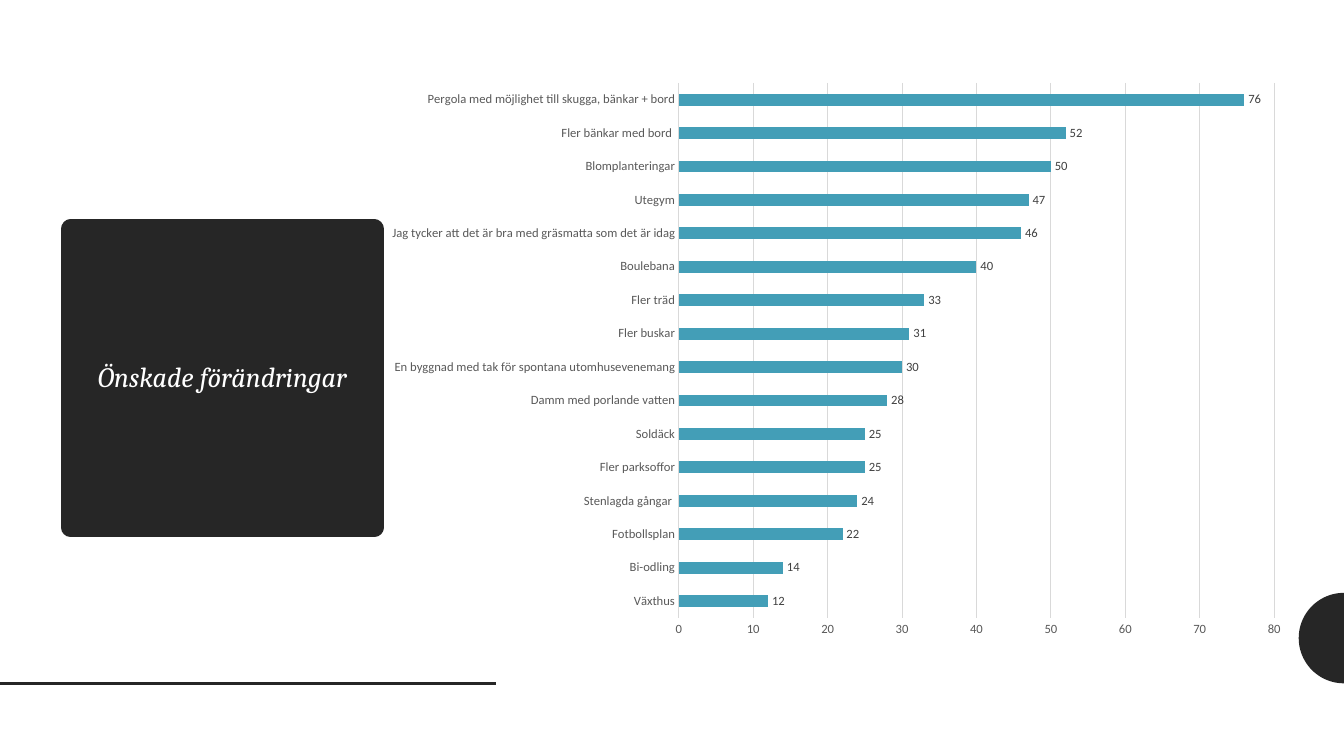
from math import cos, pi, sin

from lxml.etree import SubElement
from pptx import Presentation
from pptx.chart.data import CategoryChartData
from pptx.dml.color import RGBColor
from pptx.enum.chart import XL_CHART_TYPE as ChartType
from pptx.enum.chart import XL_LABEL_POSITION as LabelPosition
from pptx.enum.chart import XL_TICK_MARK as TickMark
from pptx.enum.shapes import MSO_CONNECTOR as Connector
from pptx.enum.text import MSO_ANCHOR as Anchor
from pptx.enum.text import MSO_AUTO_SIZE as AutoSize
from pptx.enum.text import PP_ALIGN as Align
from pptx.oxml.ns import qn
from pptx.util import Cm, Pt

# Content
TITLE = "Önskade förändringar"
WISHES = [
    ("Växthus", 12),
    ("Bi-odling", 14),
    ("Fotbollsplan", 22),
    ("Stenlagda gångar ", 24),
    ("Fler parksoffor", 25),
    ("Soldäck", 25),
    ("Damm med porlande vatten", 28),
    ("En byggnad med tak för spontana utomhusevenemang", 30),
    ("Fler buskar", 31),
    ("Fler träd", 33),
    ("Boulebana", 40),
    ("Jag tycker att det är bra med gräsmatta som det är idag", 46),
    ("Utegym", 47),
    ("Blomplanteringar", 50),
    ("Fler bänkar med bord ", 52),
    ("Pergola med möjlighet till skugga, bänkar + bord", 76),
]

# Layout in centimetres, and colours
WIDTH, HEIGHT = 33.87, 19.05
TITLE_BOX = (1.78, 5.77, 7.65, 7.52)
CHART_BOX = (9.42, 1.8, 23.32, 14.53)
RULE_Y, RULE_END = 17.22, 12.5
RADIUS = 1.14
DARK, WHITE, TEAL = "262626", "FFFFFF", "439EB7"
AXIS_TEXT, LABEL_TEXT, GRID = "595959", "404040", "D9D9D9"


def paint(target, color):
    target.solid()
    target.fore_color.rgb = RGBColor.from_string(color)


def style_font(font, name, size, color):
    font.name, font.size = name, Pt(size)
    font.color.rgb = RGBColor.from_string(color)


def style_line(line, color, width):
    paint(line.fill, color)
    line.width = Pt(width)


presentation = Presentation()
presentation.slide_width, presentation.slide_height = Cm(WIDTH), Cm(HEIGHT)
slide = presentation.slides.add_slide(presentation.slide_layouts[5])
shapes = slide.shapes

# Half circle on the right edge
center_y = RULE_Y - RADIUS
arc = [(Cm(WIDTH - RADIUS * sin(pi * step / 48)),
        Cm(center_y - RADIUS * cos(pi * step / 48))) for step in range(49)]
builder = shapes.build_freeform(*arc[0])
builder.add_line_segments(arc[1:], close=True)
half_circle = builder.convert_to_shape()
half_circle.shadow.inherit = False
paint(half_circle.fill, DARK)
half_circle.line.fill.background()

# Rule at the lower left
rule = shapes.add_connector(Connector.STRAIGHT, 0, Cm(RULE_Y), Cm(RULE_END), Cm(RULE_Y))
style_line(rule.line, DARK, 2)
SubElement(rule._element.spPr, qn("a:effectLst"))

# Title in a dark box; the thick line with round joins softens its corners
title = shapes.title
title.left, title.top, title.width, title.height = map(Cm, TITLE_BOX)
paint(title.fill, DARK)
style_line(title.line, DARK, 13.75)
SubElement(title._element.spPr.find(qn("a:ln")), qn("a:round"))
text_frame = title.text_frame
text_frame.text = TITLE
text_frame.word_wrap = True
text_frame.auto_size = AutoSize.NONE
text_frame.vertical_anchor = Anchor.MIDDLE
paragraph = text_frame.paragraphs[0]
paragraph.alignment, paragraph.line_spacing = Align.CENTER, 0.9
font = paragraph.runs[0].font
style_font(font, "Cambria", 20, WHITE)
font.italic = True

# Bar chart
chart_data = CategoryChartData()
chart_data.categories = [wish for wish, _ in WISHES]
chart_data.add_series("Series 1", [votes for _, votes in WISHES])
chart = shapes.add_chart(ChartType.BAR_CLUSTERED, *map(Cm, CHART_BOX), chart_data).chart
chart.has_legend = chart.has_title = False
style_font(chart.font, "Calibri", 10, "000000")

plot = chart.plots[0]
plot.gap_width, plot.vary_by_categories = 182, False
paint(plot.series[0].format.fill, TEAL)
plot.has_data_labels = True
labels = plot.data_labels
labels.show_value, labels.position = True, LabelPosition.OUTSIDE_END
style_font(labels.font, "Calibri", 9, LABEL_TEXT)

# Axes and gridlines
category_axis, value_axis = chart.category_axis, chart.value_axis
for axis in (category_axis, value_axis):
    axis.major_tick_mark = axis.minor_tick_mark = TickMark.NONE
    style_font(axis.tick_labels.font, "Calibri", 9, AXIS_TEXT)
style_line(category_axis.format.line, GRID, 0.75)
value_axis.format.line.fill.background()
value_axis.minimum_scale, value_axis.maximum_scale, value_axis.major_unit = 0, 80, 10
value_axis.has_major_gridlines = True
style_line(value_axis.major_gridlines.format.line, GRID, 0.75)

presentation.save("out.pptx")
